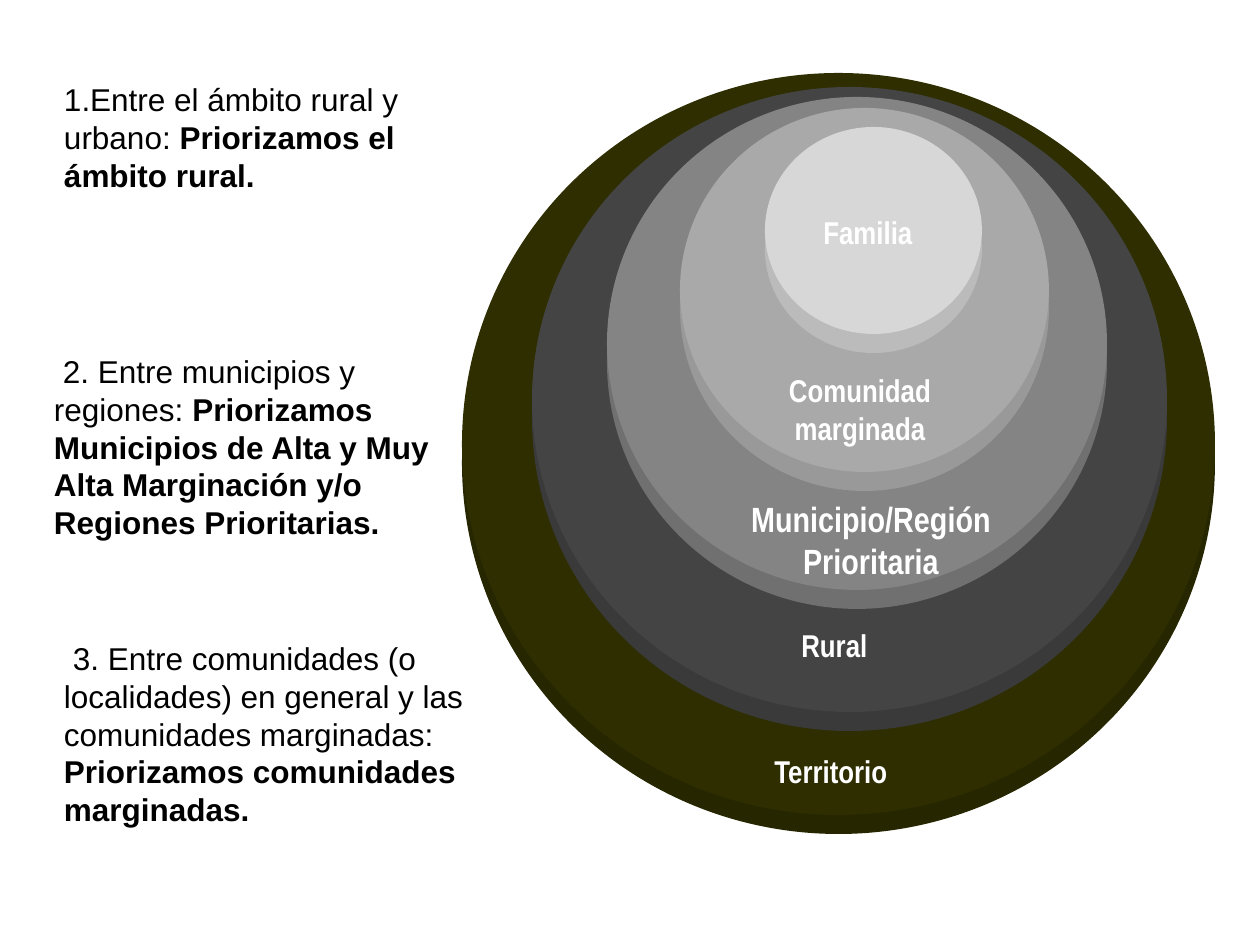
"""Builds a slide of nested circles with three prioritisation criteria."""
import pptx
import pptx.dml.color
import pptx.enum.shapes
import pptx.enum.text
import pptx.oxml
import pptx.util

EMU_PER_PX = 914400 // 126
COLORS = {
    "text": "000000", "label": "FFFFFF",
    "territory": "2E2E00", "territory side": "262600",
    "rural": "444444", "rural side": "3A3A3A",
    "region": "848484", "region side": "707070",
    "community": "A9A9A9", "community side": "999999",
    "family": "D7D7D7", "family side": "BBBBBB",
}
DISC_DEPTH = 19
ALIGN = pptx.enum.text.PP_ALIGN
ANCHOR = pptx.enum.text.MSO_ANCHOR


def px(length):
    return pptx.util.Emu(length * EMU_PER_PX)


class SlideBuilder:
    def __init__(self, slide):
        self.slide = slide

    def color(self, name):
        return pptx.dml.color.RGBColor.from_string(COLORS[name])

    def ellipse(self, left, top, width, height, color):
        shape = self.slide.shapes.add_shape(
            pptx.enum.shapes.MSO_SHAPE.OVAL, px(left), px(top), px(width), px(height))
        shape.shadow.inherit = False
        shape.fill.solid()
        shape.fill.fore_color.rgb = self.color(color)
        shape.line.fill.background()

    def disc(self, left, top, width, height, color):
        self.ellipse(left, top + DISC_DEPTH, width, height, color + " side")
        self.ellipse(left, top, width, height, color)

    def text_frame(self, left, top, width, height):
        shape = self.slide.shapes.add_textbox(px(left), px(top), px(width), px(height))
        shape.text_frame.word_wrap = True
        return shape.text_frame

    def run(self, paragraph, text, size, font, color, bold):
        run = paragraph.add_run()
        run.text = text
        run.font.size = pptx.util.Pt(size)
        run.font.name = font
        run.font.bold = bold
        run.font.color.rgb = self.color(color)

    def label(self, left, top, width, height, text, size=18,
              align=ALIGN.LEFT, anchor=ANCHOR.TOP):
        frame = self.text_frame(left, top, width, height)
        frame.vertical_anchor = anchor
        paragraph = frame.paragraphs[0]
        paragraph.alignment = align
        self.run(paragraph, text, size, "Arial Narrow", "label", True)

    def criterion(self, left, top, width, height, paragraphs, indent=0, numbered=False):
        frame = self.text_frame(left, top, width, height)
        frame.margin_left = frame.margin_top = frame.margin_right = frame.margin_bottom = 0
        for index, runs in enumerate(paragraphs):
            paragraph = frame.add_paragraph() if index else frame.paragraphs[0]
            if index == 0:
                properties = paragraph._p.get_or_add_pPr()
                properties.set("marL", "0")
                properties.set("indent", str(px(indent)))
                if numbered:
                    properties.append(pptx.oxml.parse_xml(
                        '<a:buAutoNum xmlns:a="http://schemas.openxmlformats.org/'
                        'drawingml/2006/main" type="arabicPeriod"/>'))
            for text, bold in runs:
                self.run(paragraph, text, 18, "Arial", "text", bold)


def main():
    presentation = pptx.Presentation()
    presentation.slide_width = pptx.util.Inches(10)
    presentation.slide_height = pptx.util.Inches(7.5)
    builder = SlideBuilder(presentation.slides.add_slide(presentation.slide_layouts[6]))

    for disc in [
        (462, 73, 753, 742, "territory"),
        (532, 87, 635, 625, "rural"),
        (607, 97, 500, 493, "region"),
        (680, 108, 369, 364, "community"),
        (765, 127, 217, 207, "family"),
    ]:
        builder.disc(*disc)

    builder.label(762, 746, 189, 63, "Territorio")
    builder.label(789, 620, 141, 63, "Rural")
    builder.label(729, 491, 284, 97, "Municipio/Región Prioritaria", 20,
                  ALIGN.CENTER, ANCHOR.BOTTOM)
    builder.label(775, 365, 170, 88, "Comunidad marginada", align=ALIGN.CENTER)
    builder.label(811, 207, 132, 50, "Familia")

    builder.criterion(64, 80, 387, 151, [
        [("Entre el ámbito rural y urbano: ", False),
         ("Priorizamos el ámbito rural.", True)],
    ], numbered=True)
    builder.criterion(54, 352, 377, 227, [
        [("2. Entre municipios y regiones: ", False),
         ("Priorizamos Municipios de Alta y Muy Alta Marginación y/o "
          "Regiones Prioritarias.", True)],
    ], indent=9)
    builder.criterion(64, 639, 417, 189, [
        [("3. Entre comunidades (o localidades) en general y las "
          "comunidades marginadas:", False)],
        [("Priorizamos comunidades marginadas.", True)],
    ], indent=9)
    presentation.save("out.pptx")


if __name__ == "__main__":
    main()
